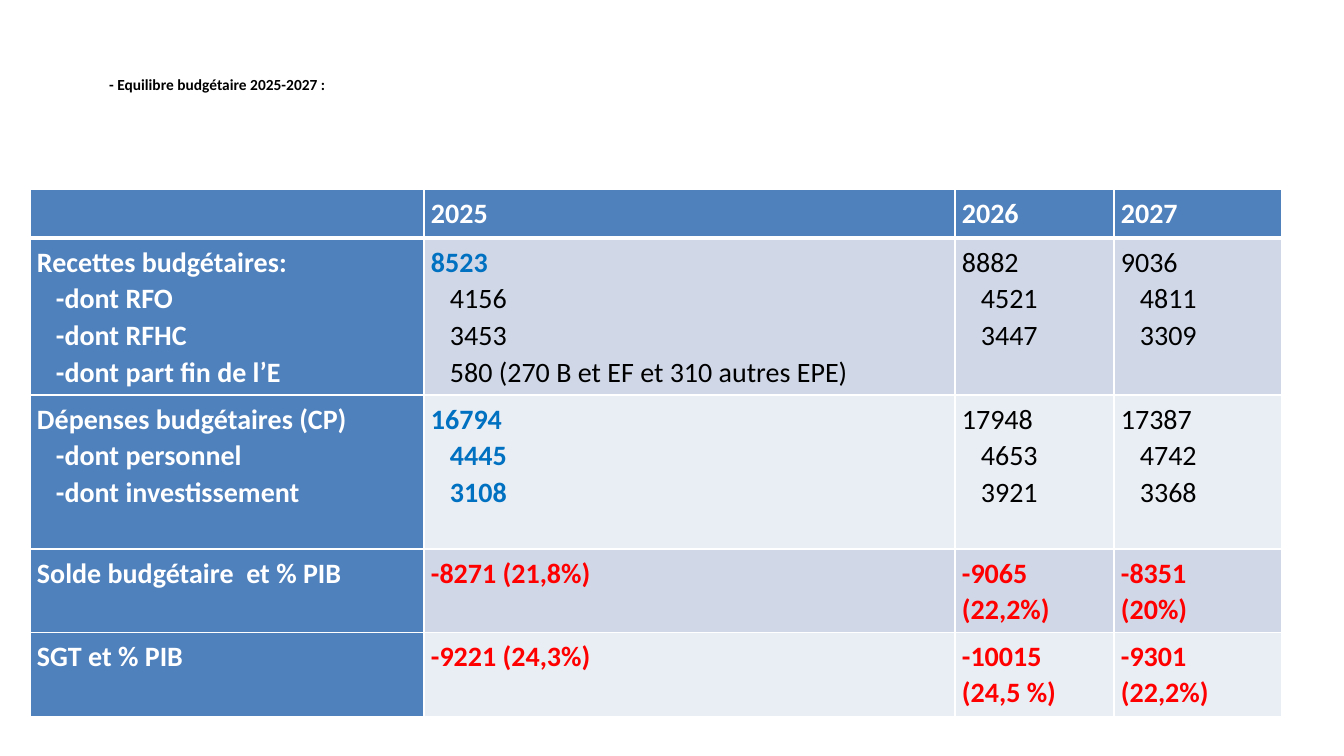
from lxml import etree
from pptx import Presentation
from pptx.dml.color import RGBColor
from pptx.enum.text import MSO_ANCHOR, PP_ALIGN
from pptx.oxml.ns import qn
from pptx.util import Emu, Pt

PX = 914400 / 100.8
LEFT, JUST = PP_ALIGN.LEFT, PP_ALIGN.JUSTIFY
MID = MSO_ANCHOR.MIDDLE
WHITE, BLACK, BLUE, RED = "FFFFFF", "000000", "0070C0", "FF0000"
HEAD, BANDS = "4F81BD", ("D0D8E8", "E9EDF4")
INDENT = 19
COLS = (394, 531, 159, 168)
ROWS = (49, 157, 154, 83, 84)
MARGINS = {"margin_left": 7, "margin_right": 7, "margin_top": 5, "margin_bottom": 5}

# Each cell lists its lines; in the two detailed rows, later lines are indented.
CELLS = (
    ([], ["2025"], ["2026"], ["2027"]),
    (["Recettes budgétaires:", "-dont RFO", "-dont RFHC", "-dont part fin de l’E"],
     ["8523", "4156", "3453", "580 (270 B et EF et 310 autres EPE)"],
     ["8882", "4521", "3447"],
     ["9036", "4811", "3309"]),
    (["Dépenses budgétaires (CP)", "-dont personnel", "-dont investissement"],
     ["16794", "4445", "3108"],
     ["17948", "4653", "3921"],
     ["17387", "4742", "3368"]),
    (["Solde budgétaire  et % PIB"], ["-8271 (21,8%)"], ["-9065 (22,2%)"],
     ["-8351", "(20%)"]),
    (["SGT et % PIB"], ["-9221 (24,3%)"], ["-10015", "(24,5 %)"],
     ["-9301", "(22,2%)"]),
)
DETAIL = (1, 2)


def px(n):
    return Emu(round(n * PX))


def rgb(code):
    return RGBColor.from_string(code)


def put(obj, form):
    for key, val in form.items():
        setattr(obj, key, val)


def write(para, text, size, color, bold, align, space):
    put(para, {"alignment": align, "line_spacing": space})
    run = para.add_run()
    run.text = text
    put(run.font, {"name": "Calibri", "size": Pt(size), "bold": bold})
    run.font.color.rgb = rgb(color)


def border(cell, row):
    props = cell._tc.get_or_add_tcPr()
    thick = {0: "lnB", 1: "lnT"}.get(row)
    for i, side in enumerate(("lnL", "lnR", "lnT", "lnB")):
        line = etree.Element(qn(f"a:{side}"), w=str(Pt(3 if side == thick else 0.96)))
        fill = etree.SubElement(line, qn("a:solidFill"))
        etree.SubElement(fill, qn("a:srgbClr"), val=WHITE)
        props.insert(i, line)


def tone(row, col, line):
    """Return the colour and weight of one line of a cell."""
    if row == 0 or col == 0:
        return WHITE, True
    if row not in DETAIL:
        return RED, True
    if col == 1 and (row == 2 or line == 0):
        return BLUE, True
    return BLACK, False


def fill_cell(cell, row, col, lines):
    put(cell, {key: px(val) for key, val in MARGINS.items()})
    border(cell, row)
    cell.fill.solid()
    cell.fill.fore_color.rgb = rgb(HEAD if row == 0 or col == 0 else BANDS[(row - 1) % 2])
    frame = cell.text_frame
    for i, text in enumerate(lines):
        para = frame.add_paragraph() if i else frame.paragraphs[0]
        color, bold = tone(row, col, i)
        write(para, text, 20, color, bold, JUST, 1.07)
        if i and row in DETAIL:
            para._p.get_or_add_pPr().set("marL", str(px(INDENT)))


def add_title(slide, text):
    title = slide.shapes.title
    put(title, {"left": px(99), "top": px(37), "width": px(1210), "height": px(98)})
    frame = title.text_frame
    put(frame, {"vertical_anchor": MID, "word_wrap": True})
    write(frame.paragraphs[0], text, 11, BLACK, True, LEFT, 0.8)


def add_budget(slide):
    table = slide.shapes.add_table(
        len(ROWS), len(COLS), px(30), px(189), px(sum(COLS)), px(sum(ROWS))).table
    put(table, {"first_col": True, "horz_banding": True})
    for col, width in zip(table.columns, COLS):
        col.width = px(width)
    for r, height in enumerate(ROWS):
        table.rows[r].height = px(height)
        for c, lines in enumerate(CELLS[r]):
            fill_cell(table.cell(r, c), r, c, lines)


def main():
    deck = Presentation()
    put(deck, {"slide_width": px(1344), "slide_height": px(756)})
    slide = deck.slides.add_slide(deck.slide_layouts[5])
    add_title(slide, "- Equilibre budgétaire 2025-2027\u00a0:")
    add_budget(slide)
    deck.save("out.pptx")


if __name__ == "__main__":
    main()
